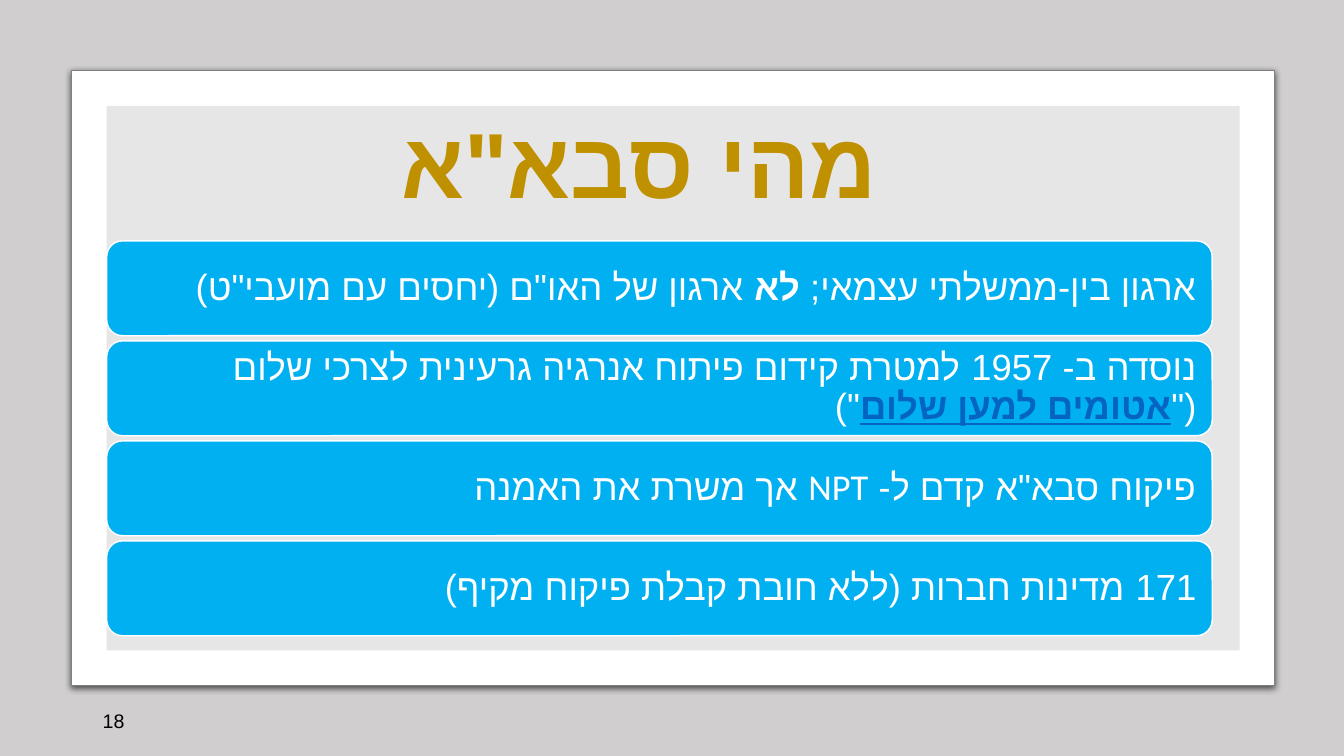
from lxml import etree
from pptx import Presentation
from pptx.dml.color import RGBColor
from pptx.enum.shapes import MSO_SHAPE
from pptx.enum.text import MSO_ANCHOR, MSO_AUTO_SIZE, PP_ALIGN
from pptx.oxml import parse_xml
from pptx.oxml.ns import qn
from pptx.util import Cm, Pt

RECT, ROUNDED = MSO_SHAPE.RECTANGLE, MSO_SHAPE.ROUNDED_RECTANGLE
LEFT, RIGHT = PP_ALIGN.LEFT, PP_ALIGN.RIGHT
MIDDLE, NO_FIT = MSO_ANCHOR.MIDDLE, MSO_AUTO_SIZE.NONE

WHITE = RGBColor(0xFF, 0xFF, 0xFF)
BLACK = RGBColor(0x00, 0x00, 0x00)
GRAY = RGBColor(0x80, 0x80, 0x80)
BACKDROP = RGBColor(0xD0, 0xCE, 0xCE)
PANEL = RGBColor(0xE7, 0xE6, 0xE6)
GOLD = RGBColor(0xBF, 0x90, 0x00)
SKY = RGBColor(0x00, 0xB0, 0xF0)
LINK = RGBColor(0x05, 0x63, 0xC1)

A = 'xmlns:a="http://schemas.openxmlformats.org/drawingml/2006/main"'
SHADOW = (f'<a:effectLst {A}><a:outerShdw blurRad="57150" dist="19050" dir="5400000">'
          '<a:srgbClr val="000000"><a:alpha val="63000"/></a:srgbClr>'
          '</a:outerShdw></a:effectLst>')
OUTLINE = (f'<a:ln {A} w="9525"><a:solidFill><a:srgbClr val="FFFFFF"/>'
           '</a:solidFill></a:ln>')

BODY = {"size": Pt(26), "name": "Calibri", "bold": False, "color": WHITE}
STRONG = {**BODY, "bold": True}
LINKED = {**STRONG, "underline": True, "color": LINK}
TITLE = {"size": Pt(66), "name": "Calibri", "bold": True, "color": GOLD}
NUMBER = {"size": Pt(14), "name": "Arial", "color": BLACK}

CARDS = [
    [("ארגון בין-ממשלתי עצמאי; ", BODY), ("לא", STRONG),
     (" ארגון של האו\"ם (יחסים עם מועבי\"ט)", BODY)],
    [("נוסדה ב- 1957 למטרת קידום פיתוח אנרגיה גרעינית לצרכי שלום (\"", BODY),
     ("אטומים למען שלום", LINKED), ("\")", BODY)],
    [("פיקוח סבא\"א קדם ל- NPT אך משרת את האמנה", BODY)],
    [("171 מדינות חברות (ללא חובת קבלת פיקוח מקיף)", BODY)],
]
CARD_TOP, CARD_PITCH = 6.07, 2.52


class Deck:
    """Build right-to-left slide elements in one style."""

    def __init__(self, prs):
        self.s = prs.slides.add_slide(prs.slide_layouts[5])
        fill = self.s.background.fill
        fill.solid()
        fill.fore_color.rgb = BACKDROP

    def set_text(self, shape, runs, align, margin=None, spacing=None):
        tf = shape.text_frame
        frame = {"word_wrap": True, "auto_size": NO_FIT, "vertical_anchor": MIDDLE}
        if margin is not None:
            for side in ("left", "right", "top", "bottom"):
                frame[f"margin_{side}"] = margin
        for key, value in frame.items():
            setattr(tf, key, value)
        p = tf.paragraphs[0]
        p.alignment, p.line_spacing = align, spacing
        p._p.get_or_add_pPr().set("rtl", "1")
        for text, style in runs:
            r = p.add_run()
            r.text = text
            for key, value in style.items():
                if key == "color":
                    r.font.color.rgb = value
                else:
                    setattr(r.font, key, value)
            rPr = r._r.get_or_add_rPr()
            rPr.set("lang", "he-IL")
            etree.SubElement(rPr, qn("a:cs"), typeface="Arial")
        return p

    def box(self, kind, left, top, width, height, color, line=None, weight=1):
        sp = self.s.shapes.add_shape(kind, Cm(left), Cm(top), Cm(width), Cm(height))
        sp.shadow.inherit = False
        sp.fill.solid()
        sp.fill.fore_color.rgb = color
        if line is None:
            sp.line.fill.background()
        else:
            sp.line.color.rgb = line
            sp.line.width = Pt(weight)
        return sp

    def page(self):
        sp = self.box(RECT, 1.8, 1.78, 30.33, 15.49, WHITE, GRAY, 0.75)
        spPr = sp._element.spPr
        spPr.replace(spPr.find(qn("a:effectLst")), parse_xml(SHADOW))
        self.box(RECT, 2.69, 2.67, 28.55, 13.72, PANEL)

    def title(self, text):
        sp = self.s.shapes.title
        place = {"left": Cm(8.53), "top": Cm(3.4), "width": Cm(13.82), "height": Cm(1.7)}
        for key, value in place.items():
            setattr(sp, key, value)
        p = self.set_text(sp, [(text, TITLE)], RIGHT, spacing=0.9)
        p.runs[0]._r.get_or_add_rPr().insert(0, parse_xml(OUTLINE))
        self.s.shapes._spTree.append(sp._element)

    def card(self, top, runs):
        sp = self.box(ROUNDED, 2.69, top, 27.86, 2.39, SKY, WHITE)
        self.set_text(sp, runs, RIGHT, Cm(0.28), 0.9)

    def number(self, text):
        sp = self.s.shapes.add_textbox(Cm(2.34), Cm(17.65), Cm(7.62), Cm(1.02))
        self.set_text(sp, [(text, NUMBER)], LEFT)


def main():
    prs = Presentation()
    prs.slide_width, prs.slide_height = Cm(33.87), Cm(19.05)
    deck = Deck(prs)
    deck.page()
    deck.title("מהי סבא\"א")
    for i, runs in enumerate(CARDS):
        deck.card(CARD_TOP + i * CARD_PITCH, runs)
    deck.number("18")
    prs.save("out.pptx")


if __name__ == "__main__":
    main()
